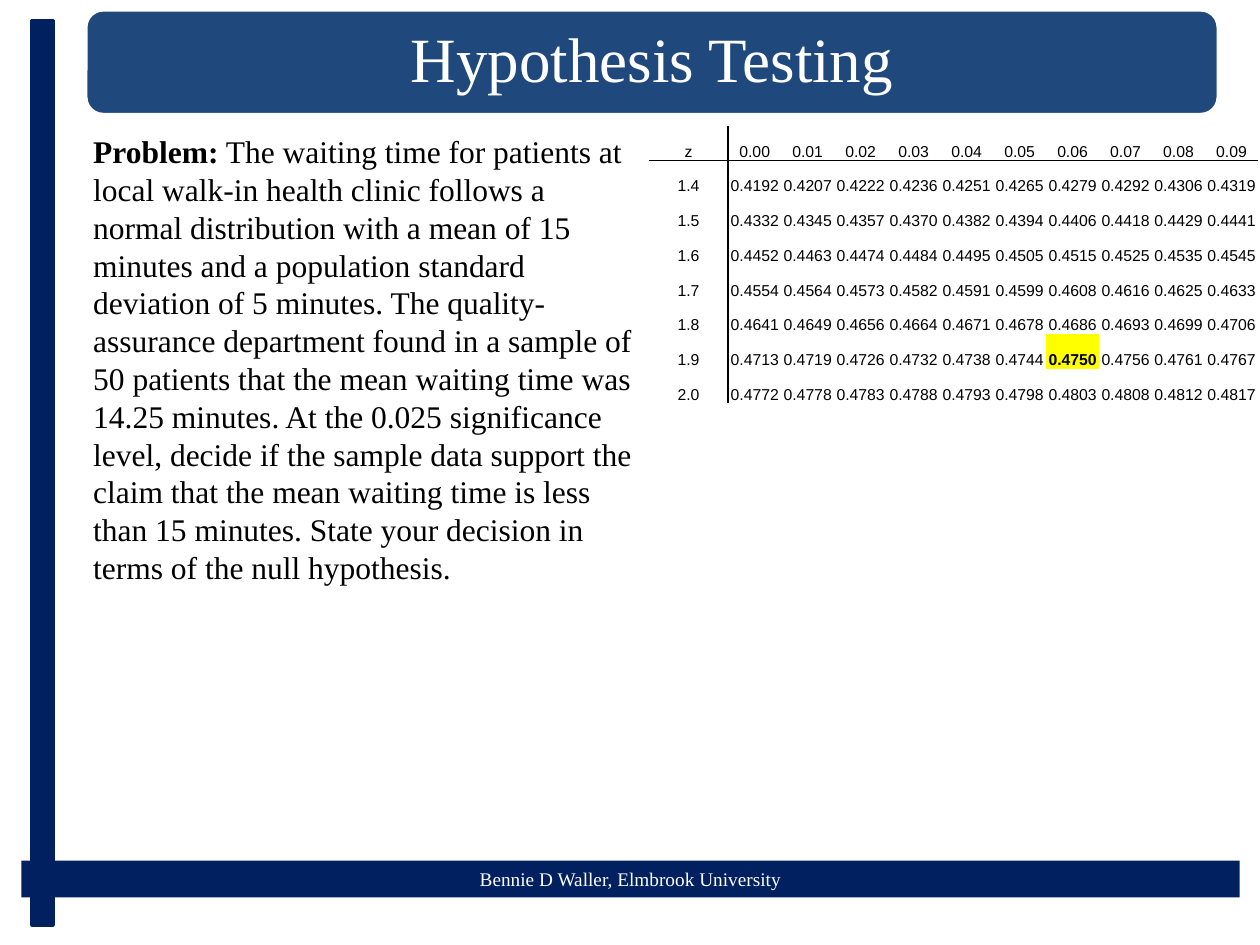
from lxml.etree import SubElement
from pptx import Presentation
from pptx.dml.color import RGBColor
from pptx.enum.shapes import MSO_SHAPE
from pptx.enum.text import MSO_ANCHOR, PP_ALIGN
from pptx.oxml.ns import qn
from pptx.util import Cm, Pt

NAVY = RGBColor(0x00, 0x20, 0x60)
BLUE = RGBColor(0x1F, 0x49, 0x7D)
YELLOW = RGBColor(0xFF, 0xFF, 0x00)
WHITE = RGBColor(0xFF, 0xFF, 0xFF)
BLACK = RGBColor(0x00, 0x00, 0x00)
SERIF, SANS = "Times New Roman", "Arial"

PROBLEM = (
    " The waiting time for patients at local walk-in health clinic follows a "
    "normal distribution with a mean of 15 minutes and a population standard "
    "deviation of 5 minutes. The quality-assurance department found in a "
    "sample of 50 patients that the mean waiting time was 14.25 minutes. At "
    "the 0.025 significance level, decide if the sample data support the "
    "claim that the mean waiting time is less than 15 minutes. State your "
    "decision in terms of the null hypothesis."
)

# Areas under the normal curve: a z value, then hundredths 0.00 to 0.09
AREAS = """
z   0.00   0.01   0.02   0.03   0.04   0.05   0.06   0.07   0.08   0.09
1.4 0.4192 0.4207 0.4222 0.4236 0.4251 0.4265 0.4279 0.4292 0.4306 0.4319
1.5 0.4332 0.4345 0.4357 0.4370 0.4382 0.4394 0.4406 0.4418 0.4429 0.4441
1.6 0.4452 0.4463 0.4474 0.4484 0.4495 0.4505 0.4515 0.4525 0.4535 0.4545
1.7 0.4554 0.4564 0.4573 0.4582 0.4591 0.4599 0.4608 0.4616 0.4625 0.4633
1.8 0.4641 0.4649 0.4656 0.4664 0.4671 0.4678 0.4686 0.4693 0.4699 0.4706
1.9 0.4713 0.4719 0.4726 0.4732 0.4738 0.4744 0.4750 0.4756 0.4761 0.4767
2.0 0.4772 0.4778 0.4783 0.4788 0.4793 0.4798 0.4803 0.4808 0.4812 0.4817
"""
CRITICAL = "0.4750"


def style(run, size, color, face=SERIF, bold=False):
    font = run.font
    font.name, font.size, font.bold = face, Pt(size), bold
    font.color.rgb = color


def add_block(slide, kind, box, fill, line=None, width=0):
    block = slide.shapes.add_shape(kind, *map(Cm, box))
    block.shadow.inherit = False
    block.fill.solid()
    block.fill.fore_color.rgb = fill
    if line is None:
        block.line.fill.background()
    else:
        block.line.color.rgb = line
        block.line.width = Pt(width)
    return block


def set_label(block, text, size):
    frame = block.text_frame
    frame.text = text
    frame.vertical_anchor = MSO_ANCHOR.MIDDLE
    para = frame.paragraphs[0]
    para.alignment = PP_ALIGN.CENTER
    style(para.runs[0], size, WHITE)
    return para


def add_footer(slide, box):
    band = add_block(slide, MSO_SHAPE.RECTANGLE, box, NAVY)
    set_label(band, "Bennie D Waller, Elmbrook University", 11)


def add_stripe(slide, box):
    add_block(slide, MSO_SHAPE.RECTANGLE, box, NAVY, NAVY, 2.5)


def add_title(slide, box):
    banner = add_block(slide, MSO_SHAPE.ROUNDED_RECTANGLE, box, BLUE, WHITE, 2)
    set_label(banner, "Hypothesis Testing", 36).line_spacing = 0.9


def add_problem(slide, box):
    frame = slide.shapes.add_textbox(*map(Cm, box)).text_frame
    frame.word_wrap = True
    para = frame.paragraphs[0]
    for text, bold in (("Problem:", True), (PROBLEM, False)):
        run = para.add_run()
        run.text = text
        style(run, 18, BLACK, bold=bold)


def add_border(cell, side, drawn):
    props = cell._tc.get_or_add_tcPr()
    line = SubElement(props, qn("a:ln" + side), w=str(Pt(1)))
    if drawn:
        fill = SubElement(line, qn("a:solidFill"))
        SubElement(fill, qn("a:srgbClr"), val=str(BLACK))
    else:
        SubElement(line, qn("a:noFill"))


def fill_cell(cell, text, row, col):
    cell.text = text
    cell.vertical_anchor = MSO_ANCHOR.BOTTOM
    cell.margin_left = cell.margin_right = cell.margin_top = Cm(0.02)
    cell.margin_bottom = 0
    para = cell.text_frame.paragraphs[0]
    para.alignment = PP_ALIGN.CENTER
    marked = text == CRITICAL
    style(para.runs[0], 9, BLACK, SANS, marked)

    # Rules right of the z column and under the header, in schema order
    rules = (("L", col == 1), ("R", col == 0), ("T", row == 1), ("B", row == 0))
    for side, drawn in rules:
        add_border(cell, side, drawn)
    cell.fill.solid()
    cell.fill.fore_color.rgb = YELLOW if marked else WHITE


def add_areas(slide, box):
    rows = [line.split() for line in AREAS.strip().splitlines()]
    left, top, width, height = box
    count, first = len(rows[0]), 1.6
    table = slide.shapes.add_table(len(rows), count, *map(Cm, box)).table
    table.first_row = table.horz_banding = False
    for col, column in enumerate(table.columns):
        column.width = Cm((width - first) / (count - 1) if col else first)
    for row, texts in enumerate(rows):
        table.rows[row].height = Cm(height / len(rows))
        for col, text in enumerate(texts):
            fill_cell(table.cell(row, col), text, row, col)


def main():
    deck = Presentation()
    deck.slide_width, deck.slide_height = Cm(25.4), Cm(19.05)
    slide = deck.slides.add_slide(deck.slide_layouts[6])

    # Frame
    add_footer(slide, (0.43, 17.35, 24.56, 0.74))
    add_stripe(slide, (0.64, 0.43, 0.43, 18.21))
    add_title(slide, (1.73, 0.2, 22.83, 2.11))

    # Content
    add_problem(slide, (1.63, 2.54, 11.5, 9.5))
    add_areas(slide, (13.08, 2.54, 12.28, 5.6))
    deck.save("out.pptx")


if __name__ == "__main__":
    main()
